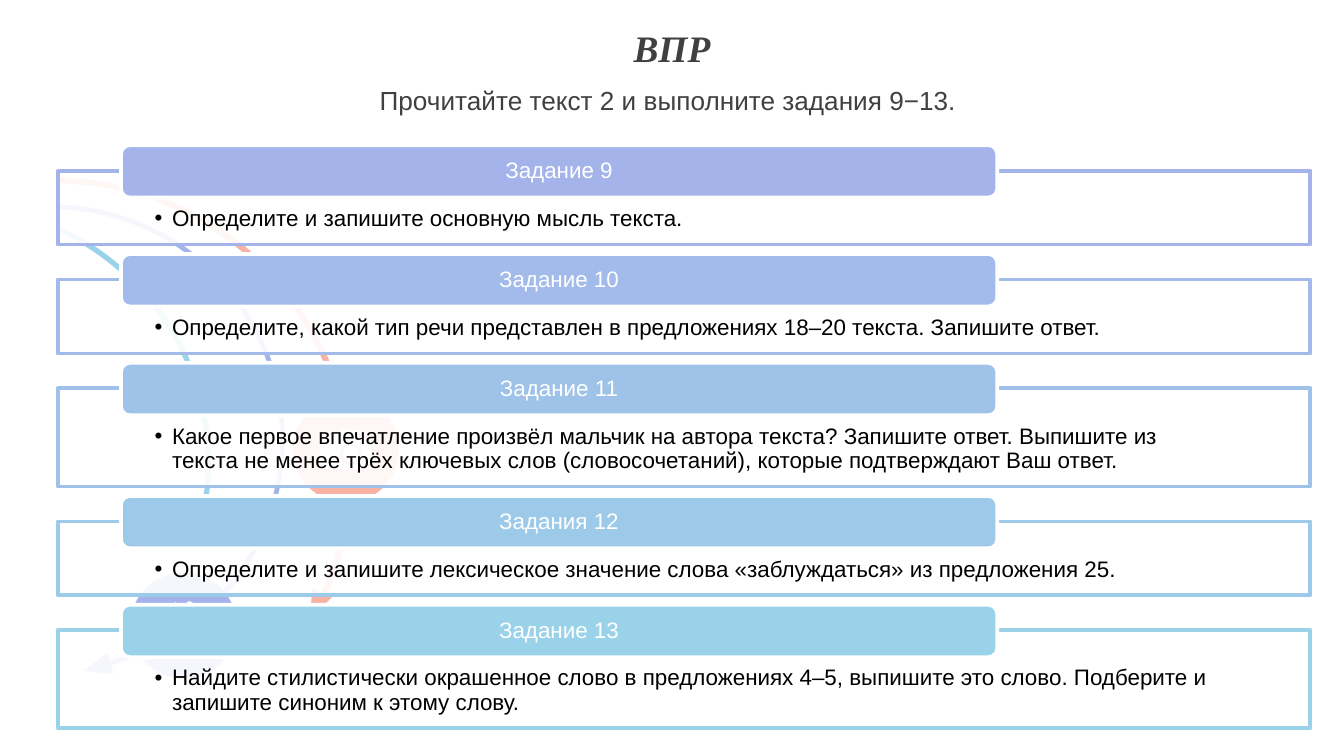
"""Build the slide listing the five tasks for text 2 of the school test."""
import math
from dataclasses import dataclass

from lxml import etree
from pptx import Presentation
from pptx import util as u
from pptx.dml import color
from pptx.enum import shapes, text
from pptx.oxml import ns


@dataclass(frozen=True)
class Theme:
    violet: str = "A4B4EA"
    coral: str = "F8B2A3"
    sky: str = "9AD3E9"
    white: str = "FFFFFF"
    ink: str = "404040"
    black: str = "000000"
    tints: tuple = ("A4B4EA", "A2BBEA", "9FC2E9", "9DCAE9", "9AD3E9")
    title_size: int = 20
    subtitle_size: int = 14
    task_size: int = 12


theme = Theme()
deck = Presentation()
deck.slide_width = u.Inches(10)
deck.slide_height = deck.slide_width * 9 // 16
page = deck.slides.add_slide(deck.slide_layouts[6])


def add_box(kind, place, fill, line=None):
    box = page.shapes.add_shape(kind, *[u.Inches(length) for length in place])
    box.shadow.inherit = False
    box.fill.solid()
    box.fill.fore_color.rgb = color.RGBColor.from_string(fill)
    if line:
        box.line.color.rgb = color.RGBColor.from_string(line)
        box.line.width = u.Pt(2)
    else:
        box.line.fill.background()
    return box


def write(box, words, size, ink, align, insets, font="Arial"):
    frame = box.text_frame
    frame.word_wrap = True
    frame.vertical_anchor = text.MSO_ANCHOR.MIDDLE
    frame.margin_left, frame.margin_top, frame.margin_right, frame.margin_bottom = [
        u.Inches(inset) for inset in insets]
    frame.text = words
    para = frame.paragraphs[0]
    para.alignment = align
    span = para.runs[0]
    span.font.name, span.font.size = font, u.Pt(size)
    span.font.color.rgb = color.RGBColor.from_string(ink)
    return para


preset = shapes.MSO_SHAPE
center, left = text.PP_ALIGN.CENTER, text.PP_ALIGN.LEFT

add_box(preset.OVAL, (0.97, 4.26, 0.79, 0.79), theme.violet)
add_box(preset.OVAL, (2.18, 2.95, 0.79, 0.79), theme.coral)

arcs = [
    (theme.violet, (-1.37, 1.52, 3.49, 3.49), (162.91, 45.77, 0.01), (0.64, 4.86), 255),
    (theme.coral, (-1.81, 1.32, 4.43, 4.43), (162.33, 14.31, 0.01), (2.27, 4.4), 206.2),
    (theme.sky, (-2.3, 1.51, 3.87, 3.87), (176.95, 8.5, 0.01), (1.37, 3.85), 206.2),
]
for tint, place, bends, tip, turn in arcs:
    arc = add_box(preset.BLOCK_ARC, place, tint)
    for index, bend in enumerate(bends):
        arc.adjustments[index] = bend
    arrow = add_box(preset.ISOSCELES_TRIANGLE, (*tip, 0.16, 0.21), tint)
    arrow.rotation = turn

turns = [math.tau * step / 36 for step in range(36)]
gear = [[(1.37 + radius * math.cos(turn), 4.65 + radius * math.sin(turn)) for turn in turns]
        for radius in (0.12, 0.11, 0.07)]
teeth = [(1.37 + radius * math.cos(turn), 4.65 + radius * math.sin(turn))
         for turn, radius in zip(turns, (0.18, 0.18, 0.14, 0.14) * 9)]
camera = [[(2.61 + radius * math.cos(turn), 3.38 + radius * math.sin(turn)) for turn in turns]
          for radius in (0.08, 0.06)]
body = [(2.38, 3.26), (2.42, 3.26), (2.42, 3.24), (2.49, 3.24), (2.49, 3.26), (2.54, 3.26),
        (2.54, 3.2), (2.68, 3.2), (2.68, 3.26), (2.76, 3.26), (2.76, 3.49), (2.38, 3.49)]
for outlines in ([teeth, *gear], [body, *camera]):
    contours = [[(u.Inches(x), u.Inches(y)) for x, y in outline] for outline in outlines]
    builder = page.shapes.build_freeform(*contours[0][0])
    builder.add_line_segments(contours[0][1:])
    for contour in contours[1:]:
        builder.move_to(*contour[0])
        builder.add_line_segments(contour[1:])
    icon = builder.convert_to_shape()
    icon.shadow.inherit = False
    icon.fill.solid()
    icon.fill.fore_color.rgb = color.RGBColor.from_string(theme.white)
    icon.line.fill.background()

headings = [
    ("ВПР", (0.06, 0.1, 9.88, 0.51), theme.title_size, "Times New Roman"),
    ("Прочитайте текст 2 и выполните задания 9−13.", (-0.03, 0.59, 10, 0.31),
     theme.subtitle_size, "Arial"),
]
for words, place, size, font in headings:
    box = page.shapes.add_textbox(*[u.Inches(length) for length in place])
    para = write(box, words, size, theme.ink, center, (0.1, 0.05, 0.1, 0.05), font)
    para.runs[0].font.bold = para.runs[0].font.italic = font != "Arial"

tasks = [
    ("Задание 9", 0.55, "Определите и запишите основную мысль текста."),
    ("Задание 10", 0.55, "Определите, какой тип речи представлен в предложениях 18–20 текста. "
     "Запишите ответ."),
    ("Задание 11", 0.73, "Какое первое впечатление произвёл мальчик на автора текста? "
     "Запишите ответ. Выпишите из текста не менее трёх ключевых слов (словосочетаний), "
     "которые подтверждают Ваш ответ."),
    ("Задания 12", 0.55, "Определите и запишите лексическое значение слова «заблуждаться» "
     "из предложения 25."),
    ("Задание 13", 0.73, "Найдите стилистически окрашенное слово в предложениях 4–5, "
     "выпишите это слово. Подберите и запишите синоним к этому слову."),
]
top, gap = 1.27, 0.26
for tint, (name, height, words) in zip(theme.tints, tasks):
    panel = add_box(preset.RECTANGLE, (0.43, top, 9.32, height), theme.white, tint)
    paint = panel.fill._xPr.find(ns.qn("a:solidFill"))[0]
    etree.SubElement(paint, ns.qn("a:alpha")).set("val", "90000")
    para = write(panel, words, theme.task_size, theme.black, left, (0.72, 0.27, 0.72, 0.09))
    panel.text_frame.vertical_anchor = text.MSO_ANCHOR.TOP
    details = para._p.get_or_add_pPr()
    details.set("marL", str(u.Inches(0.13)))
    details.set("indent", str(u.Inches(-0.13)))
    etree.SubElement(details, ns.qn("a:buFont")).set("typeface", "Arial")
    etree.SubElement(details, ns.qn("a:buChar")).set("char", "•")
    para.level = 1
    para.line_spacing = 0.9
    para.font.size = u.Pt(theme.task_size)

    header = add_box(preset.ROUNDED_RECTANGLE, (0.9, top - 0.19, 6.52, 0.39), tint, theme.white)
    para = write(header, name, theme.task_size, theme.white, center, (0.25, 0, 0.25, 0))
    para.line_spacing = 0.9
    top += height + gap

deck.save("out.pptx")
